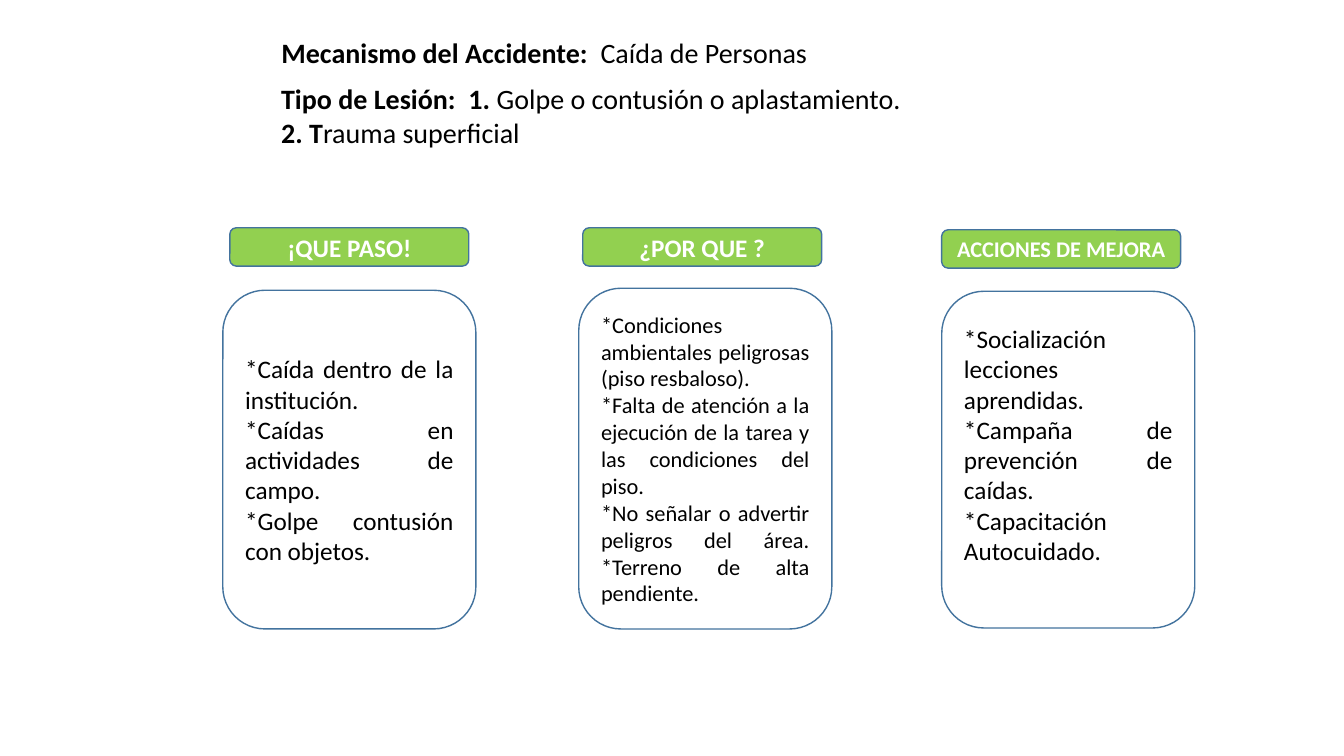
from dataclasses import dataclass
from pptx import Presentation
from pptx import util as u
from pptx.dml.color import RGBColor
from pptx.enum import shapes, text


@dataclass(frozen=True)
class Theme:
    font: str = "Calibri"
    ink: str = "000000"
    paper: str = "FFFFFF"
    green: str = "92D050"
    outline: str = "43739E"
    heading: int = 20
    label: int = 18
    small: int = 16


THEME = Theme()
SLIDE_W, SLIDE_H = 13.33, 7.5

# Each paragraph is a list of (words, bold) spans.
MECHANISM = [[("Mecanismo del Accidente:  ", True), ("Caída de Personas", False)]]
INJURY = [
    [("Tipo de Lesión:  1. ", True), ("Golpe o contusión o aplastamiento.", False)],
    [("2. T", True), ("rauma superficial", False)],
]
# label, label size, label (left, top), body size, body (left, top, height), bottom inset, body
COLUMNS = [
    ("¡QUE PASO!", THEME.label, (2.28, 2.26), THEME.label, (2.21, 2.88, 3.36), 0.05, [
        "*Caída dentro de la institución.",
        "*Caídas en actividades de campo.",
        "*Golpe contusión con objetos."]),
    ("¿POR QUE ?", THEME.label, (5.78, 2.26), THEME.small, (5.74, 2.86, 3.38), 0.05, [
        "*Condiciones ambientales peligrosas (piso resbaloso).",
        "*Falta de atención a la ejecución de la tarea y las condiciones del piso.",
        "*No señalar o advertir peligros del área. *Terreno de alta pendiente."]),
    ("ACCIONES DE MEJORA", THEME.small, (9.34, 2.28), THEME.label, (9.34, 2.89, 3.34), 0.35, [
        "*Socialización lecciones aprendidas.",
        "*Campaña de prevención de caídas.",
        "*Capacitación Autocuidado."]),
]
LABEL_W, LABEL_H, BODY_W = 2.37, 0.38, 2.51
HEADING_LEFT = 2.69


def write(box, paragraphs, size, color, align, anchor):
    frame = box.text_frame
    frame.word_wrap = True
    frame.auto_size = text.MSO_AUTO_SIZE.NONE
    frame.vertical_anchor = anchor
    for index, spans in enumerate(paragraphs):
        para = frame.add_paragraph() if index else frame.paragraphs[0]
        para.alignment = align
        for words, bold in spans:
            span = para.add_run()
            span.text = words
            span.font.name = THEME.font
            span.font.size = u.Pt(size)
            span.font.bold = bold
            span.font.color.rgb = RGBColor.from_string(color)


def add_panel(page, left, top, width, height, fill):
    panel = page.shapes.add_shape(
        shapes.MSO_SHAPE.ROUNDED_RECTANGLE, *map(u.Inches, (left, top, width, height)))
    panel.shadow.inherit = False
    panel.fill.solid()
    panel.fill.fore_color.rgb = RGBColor.from_string(fill)
    panel.line.color.rgb = RGBColor.from_string(THEME.outline)
    panel.line.width = u.Pt(1)
    return panel


def add_headings(page):
    title = page.shapes.title
    title.left, title.top, title.width, title.height = map(
        u.Inches, (HEADING_LEFT, 0.3, 5.85, 0.44))
    injury = page.shapes.add_textbox(
        *map(u.Inches, (HEADING_LEFT, 0.76, SLIDE_W - HEADING_LEFT, 0.77)))
    for box, paragraphs in ((title, MECHANISM), (injury, INJURY)):
        write(box, paragraphs, THEME.heading, THEME.ink,
              text.PP_ALIGN.LEFT, text.MSO_ANCHOR.TOP)


def add_column(page, label, label_size, label_at, body_size, body_at, inset, lines):
    left, top, height = body_at
    body = add_panel(page, left, top, BODY_W, height, THEME.paper)
    body.text_frame.margin_bottom = u.Inches(inset)
    write(body, [[(line, False)] for line in lines], body_size, THEME.ink,
          text.PP_ALIGN.JUSTIFY, text.MSO_ANCHOR.MIDDLE)
    tag = add_panel(page, *label_at, LABEL_W, LABEL_H, THEME.green)
    write(tag, [[(label, True)]], label_size, THEME.paper,
          text.PP_ALIGN.CENTER, text.MSO_ANCHOR.MIDDLE)


def main():
    deck = Presentation()
    deck.slide_width, deck.slide_height = u.Inches(SLIDE_W), u.Inches(SLIDE_H)
    page = deck.slides.add_slide(deck.slide_layouts.get_by_name("Title Only"))
    add_headings(page)
    for column in COLUMNS:
        add_column(page, *column)
    deck.save("out.pptx")


if __name__ == "__main__":
    main()
